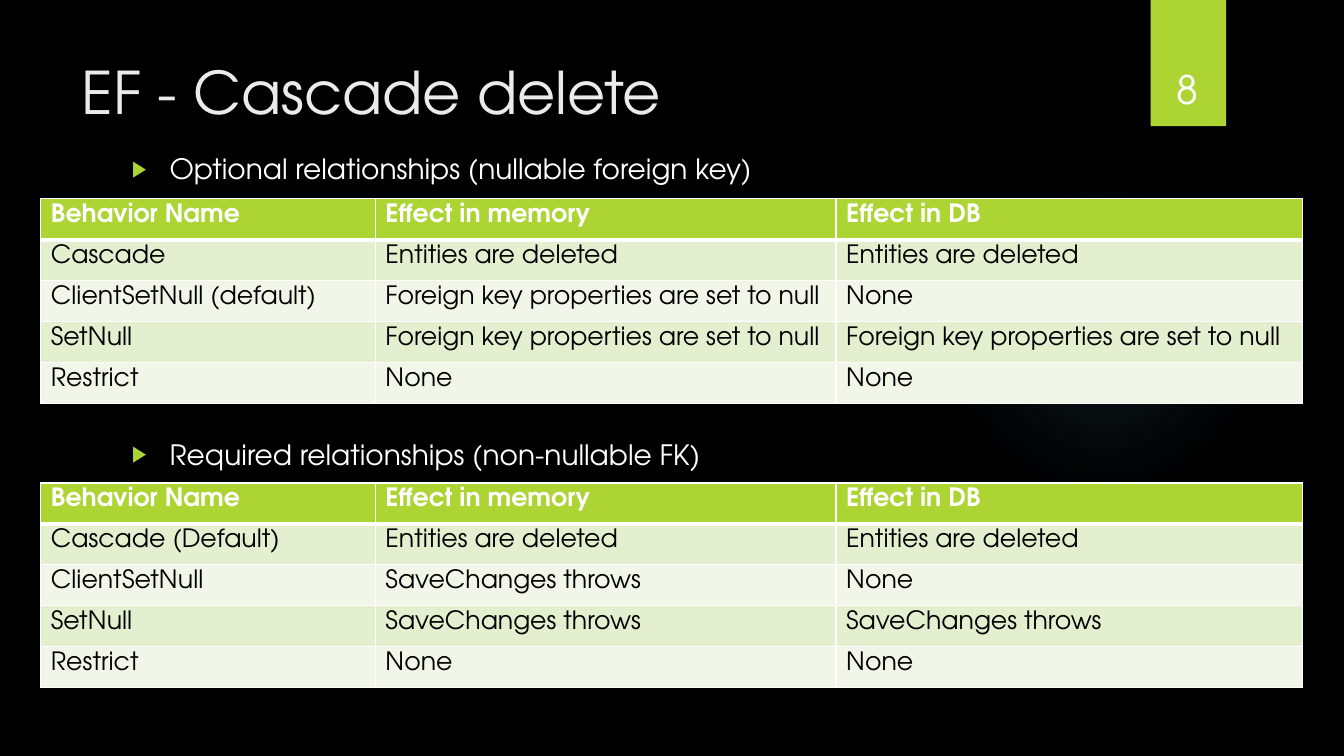
from lxml import etree
from pptx import Presentation
from pptx.dml.color import RGBColor
from pptx.enum.shapes import MSO_SHAPE
from pptx.enum.text import MSO_ANCHOR, MSO_AUTO_SIZE, PP_ALIGN
from pptx.oxml import parse_xml
from pptx.oxml.ns import nsdecls, qn
from pptx.util import Cm, Pt

OVAL, RECT = MSO_SHAPE.OVAL, MSO_SHAPE.RECTANGLE
TOP, BOTTOM = MSO_ANCHOR.TOP, MSO_ANCHOR.BOTTOM
LEFT, CENTER = PP_ALIGN.LEFT, PP_ALIGN.CENTER
FIXED = MSO_AUTO_SIZE.NONE

BLACK = RGBColor(0x00, 0x00, 0x00)
WHITE = RGBColor(0xFF, 0xFF, 0xFF)
PALE = RGBColor(0xEB, 0xEB, 0xEB)
LIME = RGBColor(0xAC, 0xD4, 0x33)
BANDS = (RGBColor(0xF1, 0xF7, 0xE8), RGBColor(0xE3, 0xEF, 0xCE))
GLOW = RGBColor(0x7A, 0xC4, 0xF0)

FACE = "TeX Gyre Adventor"
COLS = (8.43, 11.61, 11.76)
ROW = 1.03
HEAD = ("Behavior Name", "Effect in memory", "Effect in DB")
GONE = "Entities are deleted"
NULLED = "Foreign key properties are set to null"
THROWS = "SaveChanges throws"
OPTION = (
    HEAD,
    ("Cascade", GONE, GONE),
    ("ClientSetNull (default)", NULLED, "None"),
    ("SetNull", NULLED, NULLED),
    ("Restrict", "None", "None"),
)
NEEDED = (
    HEAD,
    ("Cascade (Default)", GONE, GONE),
    ("ClientSetNull", THROWS, "None"),
    ("SetNull", THROWS, THROWS),
    ("Restrict", "None", "None"),
)


def style(para, size, color, bold=False, align=LEFT):
    para.alignment = align
    font = para.font
    font.name, font.size, font.bold = FACE, Pt(size), bold
    font.color.rgb = color


def place(shape, left, top, width, height):
    shape.left, shape.top = Cm(left), Cm(top)
    shape.width, shape.height = Cm(width), Cm(height)


def frame(shape, anchor=TOP):
    text = shape.text_frame
    text.word_wrap = True
    text.auto_size = FIXED
    text.vertical_anchor = anchor
    return text


def add_form(slide, kind, left, top, width, height):
    form = slide.shapes.add_shape(kind, Cm(left), Cm(top), Cm(width), Cm(height))
    form.shadow.inherit = False
    form.line.fill.background()
    form.fill.solid()
    form.fill.fore_color.rgb = LIME
    return form


def add_glow(slide):
    glow = add_form(slide, OVAL, 23.9, 4.65, 7.82, 7.82)
    stops = "".join(
        f'<a:gs pos="{pos * 1000}"><a:srgbClr val="{GLOW}">'
        f'<a:alpha val="{alpha * 1000}"/></a:srgbClr></a:gs>'
        for pos, alpha in ((0, 7), (36, 6), (69, 0))
    )
    fill = parse_xml(
        f'<a:gradFill {nsdecls("a")} rotWithShape="1"><a:gsLst>{stops}</a:gsLst>'
        '<a:path path="circle"><a:fillToRect l="50000" t="50000" r="50000" b="50000"/>'
        "</a:path></a:gradFill>"
    )
    props = glow.fill._xPr
    props.replace(props.find(qn("a:solidFill")), fill)


def add_number(slide):
    add_form(slide, RECT, 29.0, 0, 1.9, 3.18)
    box = slide.shapes.add_textbox(Cm(28.75), Cm(0.83), Cm(2.34), Cm(2.13))
    para = frame(box, BOTTOM).paragraphs[0]
    para.text = "8"
    style(para, 28, WHITE, align=CENTER)


def add_bullet(para):
    props = para._p.get_or_add_pPr()
    props.set("marL", str(Cm(0.95)))
    props.set("indent", str(-Cm(0.95)))
    tint = etree.SubElement(props, qn("a:buClr"))
    etree.SubElement(tint, qn("a:srgbClr")).set("val", str(LIME))
    etree.SubElement(props, qn("a:buSzPct")).set("val", "80000")
    etree.SubElement(props, qn("a:buChar")).set("char", "▶")


def fill_title(shape):
    place(shape, 1.8, 1.27, 26.14, 3.89)
    para = frame(shape).paragraphs[0]
    para.text = "EF - Cascade delete"
    style(para, 42, PALE)


def fill_body(shape):
    place(shape, 3.07, 3.7, 24.84, 11.66)
    text = frame(shape)
    text.text = (
        "Optional relationships (nullable foreign key)\n"
        "Required relationships (non-nullable FK)"
    )
    for para, gap in zip(text.paragraphs, (0, 180)):
        add_bullet(para)
        para.space_before = Pt(gap)
        style(para, 20, WHITE)


def add_edges(cell, head):
    props = cell._tc.get_or_add_tcPr()
    for side in ("lnL", "lnR", "lnT", "lnB"):
        width = Pt(3 if head and side == "lnB" else 1)
        line = etree.SubElement(props, qn(f"a:{side}"))
        line.set("w", str(width))
        paint = etree.SubElement(line, qn("a:solidFill"))
        etree.SubElement(paint, qn("a:srgbClr")).set("val", str(WHITE))


def fill_cell(cell, words, row):
    head = row == 0
    add_edges(cell, head)
    cell.fill.solid()
    cell.fill.fore_color.rgb = LIME if head else BANDS[row % 2]
    cell.text = words
    style(cell.text_frame.paragraphs[0], 18, WHITE if head else BLACK, head)


def add_grid(slide, top, data):
    grid = slide.shapes.add_table(
        len(data), len(COLS), Cm(1.03), Cm(top), Cm(sum(COLS)), Cm(ROW * len(data))
    ).table
    for col, width in zip(grid.columns, COLS):
        col.width = Cm(width)
    for i, words in enumerate(data):
        grid.rows[i].height = Cm(ROW)
        for j, word in enumerate(words):
            fill_cell(grid.cell(i, j), word, i)


def main():
    deck = Presentation()
    deck.slide_width, deck.slide_height = Cm(33.87), Cm(19.05)
    slide = deck.slides.add_slide(deck.slide_layouts[1])
    slide.background.fill.solid()
    slide.background.fill.fore_color.rgb = BLACK
    add_glow(slide)
    fill_title(slide.shapes.title)
    fill_body(slide.placeholders[1])
    add_number(slide)
    add_grid(slide, 5.01, OPTION)
    add_grid(slide, 12.17, NEEDED)
    deck.save("out.pptx")


if __name__ == "__main__":
    main()
